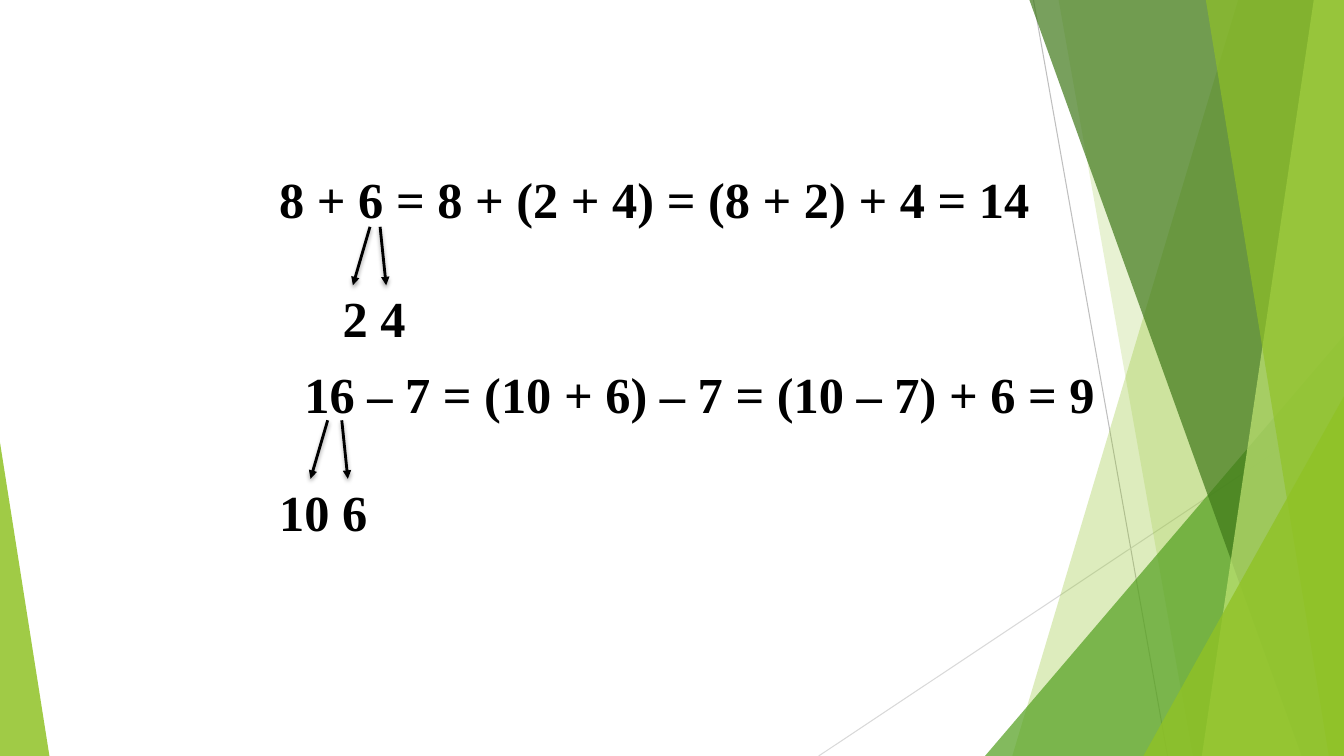
from dataclasses import dataclass

from lxml import etree
from pptx import Presentation
from pptx.dml.color import RGBColor
from pptx.enum.dml import MSO_LINE
from pptx.enum.shapes import MSO_CONNECTOR, MSO_SHAPE
from pptx.enum.text import MSO_AUTO_SIZE
from pptx.oxml import parse_xml
from pptx.oxml.ns import nsdecls, qn
from pptx.util import Inches, Pt

STRAIGHT = MSO_CONNECTOR.STRAIGHT
TRIANGLE = MSO_SHAPE.ISOSCELES_TRIANGLE
SOLID = MSO_LINE.SOLID
GROW = MSO_AUTO_SIZE.SHAPE_TO_FIT_TEXT
WIDTH, HEIGHT = 13.33, 7.5


@dataclass(frozen=True)
class Theme:
    font: str = "Times New Roman"
    size: int = 36
    ink: str = "000000"
    lime: str = "90C226"
    pale_lime: str = "C0E474"
    green: str = "54A021"
    dark_green: str = "3F7819"
    grey: str = "BFBFBF"
    light_grey: str = "D9D9D9"
    hairline: float = 0.75
    arrow: float = 2


class SlideBuilder:
    def __init__(self, page, theme):
        self.page = page
        self.theme = theme

    def tint(self, shape, color, opacity):
        shape.shadow.inherit = False
        shape.line.fill.background()
        shape.fill.solid()
        shape.fill.fore_color.rgb = RGBColor.from_string(color)
        color_node = shape.fill._xPr.find(qn("a:solidFill"))[0]
        etree.SubElement(color_node, qn("a:alpha"), val=str(opacity * 1000))

    def band(self, top_left, bottom_left, color, opacity):
        builder = self.page.shapes.build_freeform(Inches(top_left), 0, scale=1.0)
        corners = [(WIDTH, 0), (WIDTH, HEIGHT), (bottom_left, HEIGHT)]
        builder.add_line_segments([(Inches(x), Inches(y)) for x, y in corners])
        self.tint(builder.convert_to_shape(), color, opacity)

    def corner(self, left, top, width, apex, color, opacity):
        shape = self.page.shapes.add_shape(
            TRIANGLE, Inches(left), Inches(top), Inches(width), Inches(HEIGHT - top))
        shape.adjustments[0] = apex
        self.tint(shape, color, opacity)

    def line(self, start, end, color, width):
        connector = self.page.shapes.add_connector(
            STRAIGHT, *(Inches(value) for value in (*start, *end)))
        connector.line.color.rgb = RGBColor.from_string(color)
        connector.line.width = Pt(width)
        connector.line.dash_style = SOLID
        effects = parse_xml(f"<a:effectLst {nsdecls('a')}/>")
        connector._element.spPr.append(effects)
        return connector, effects

    def arrow(self, start, end):
        connector, effects = self.line(start, end, self.theme.ink, self.theme.arrow)
        etree.SubElement(connector.line._ln, qn("a:tailEnd"), type="triangle")
        effects.append(parse_xml(
            f'<a:outerShdw {nsdecls("a")} blurRad="{Pt(3)}" dist="{Pt(2)}" '
            'dir="5400000" rotWithShape="0"><a:srgbClr val="000000">'
            '<a:alpha val="35000"/></a:srgbClr></a:outerShdw>'))

    def equations(self, left, top, width, height, rows):
        box = self.page.shapes.add_textbox(
            Inches(left), Inches(top), Inches(width), Inches(height))
        frame = box.text_frame
        frame.word_wrap = True
        frame.auto_size = GROW
        for index, (text, indent, before) in enumerate(rows):
            para = frame.add_paragraph() if index else frame.paragraphs[0]
            para.text = text
            para.line_spacing = 1.07
            para.space_before = Pt(before)
            para.space_after = Pt(8)
            para._p.get_or_add_pPr().set("marL", str(Inches(indent)))
            para.font.name = self.theme.font
            para.font.size = Pt(self.theme.size)
            para.font.bold = True
            para.font.color.rgb = RGBColor.from_string(self.theme.ink)


def main():
    theme = Theme()
    deck = Presentation()
    deck.slide_width, deck.slide_height = Inches(WIDTH), Inches(HEIGHT)
    slide = SlideBuilder(deck.slides.add_slide(deck.slide_layouts[6]), theme)

    slide.line((10.25, 0), (11.58, HEIGHT), theme.grey, theme.hairline)
    slide.line((WIDTH, 4.03), (8.12, HEIGHT), theme.light_grey, theme.hairline)
    slide.band(12.28, 10.04, theme.lime, 30)
    slide.band(10.5, 11.83, theme.lime, 20)
    slide.corner(9.77, 3.33, 3.56, 1, theme.green, 72)
    slide.band(10.21, 12.91, theme.dark_green, 70)
    slide.band(13.03, 11.92, theme.pale_lime, 70)
    slide.band(11.96, 13.18, theme.lime, 65)
    slide.corner(11.34, 3.93, 1.99, 1, theme.lime, 80)
    slide.corner(0, 4.39, 0.49, 0, theme.lime, 85)

    gap = 30.5
    slide.equations(2.67, 1.58, 8.83, 3.9, [
        ("8 + 6 = 8 + (2 + 4) = (8 + 2) + 4 = 14", 0, 0),
        ("2 4", 0.63, gap),
        ("16 – 7 = (10 + 6) – 7 = (10 – 7) + 6 = 9", 0.25, 0),
        ("10 6", 0, gap),
    ])
    for top, left_start, right_start in ((2.25, 3.67, 3.77), (4.17, 3.25, 3.39)):
        bottom = top + 0.58
        slide.arrow((left_start, top), (left_start - 0.17, bottom))
        slide.arrow((right_start, top), (right_start + 0.06, bottom))

    deck.save("out.pptx")


if __name__ == "__main__":
    main()
